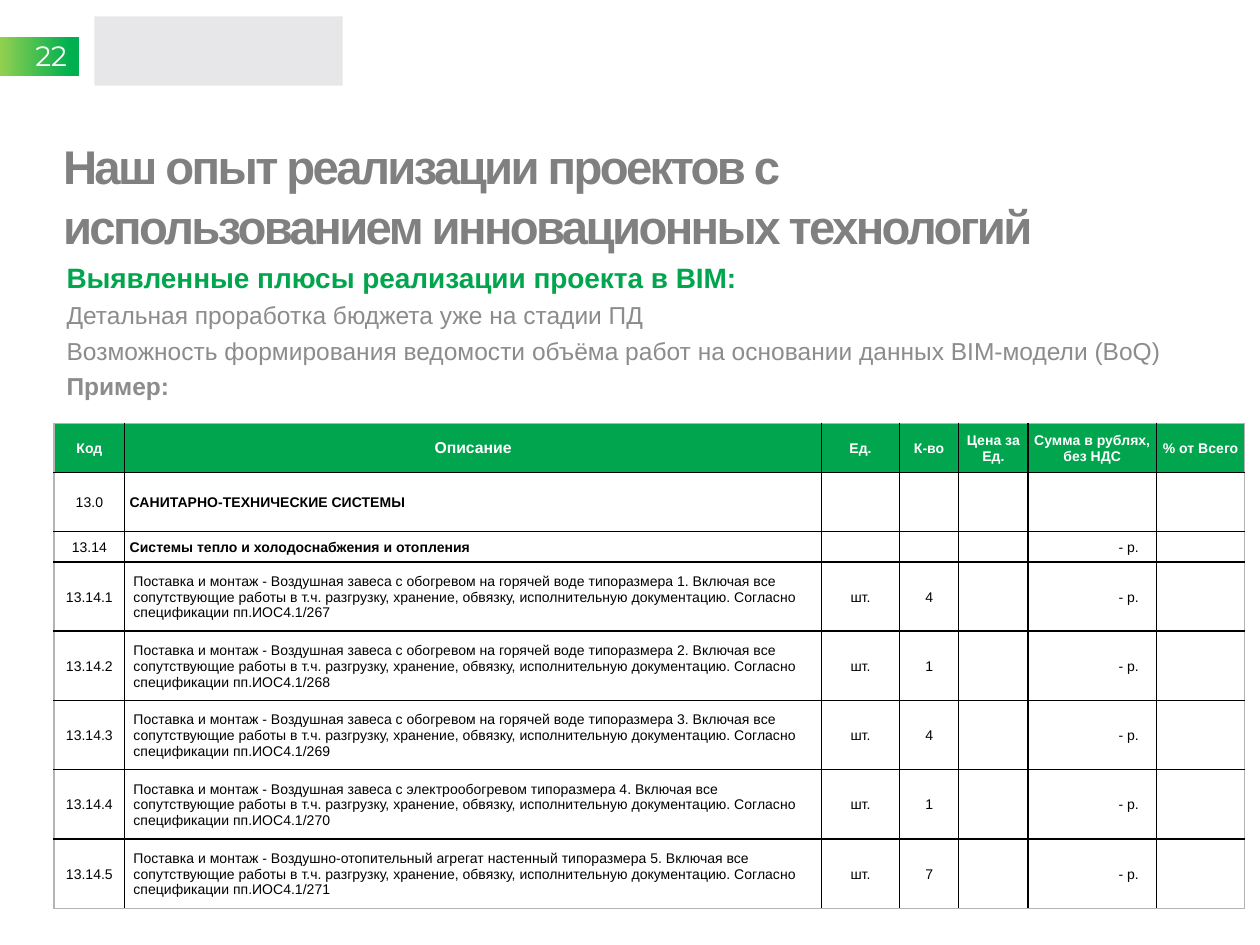
from lxml import etree
from pptx import Presentation
from pptx.dml.color import RGBColor
from pptx.enum.shapes import MSO_SHAPE
from pptx.enum.text import MSO_ANCHOR, PP_ALIGN
from pptx.oxml.ns import qn
from pptx.util import Inches, Pt

RECTANGLE = MSO_SHAPE.RECTANGLE
MIDDLE, TOP = MSO_ANCHOR.MIDDLE, MSO_ANCHOR.TOP
LEFT, CENTER, RIGHT = PP_ALIGN.LEFT, PP_ALIGN.CENTER, PP_ALIGN.RIGHT

WHITE = RGBColor(0xFF, 0xFF, 0xFF)
BLACK = RGBColor(0x00, 0x00, 0x00)
GREEN = RGBColor(0x00, 0xA5, 0x4E)
LIME = RGBColor(0x92, 0xD0, 0x50)
EMERALD = RGBColor(0x00, 0xB0, 0x50)
PALE_GRAY = RGBColor(0xE7, 0xE7, 0xE9)
TITLE_GRAY = RGBColor(0x80, 0x80, 0x80)
TEXT_GRAY = RGBColor(0x8C, 0x8C, 0x8C)
FRAME_GRAY = RGBColor(0xB4, 0xB4, 0xB4)

TITLE = "Наш опыт реализации проектов с использованием инновационных технологий"
BODY = [
    ("Выявленные плюсы реализации проекта в BIM:", 16, GREEN, True),
    ("Детальная проработка бюджета уже на стадии ПД", 14, TEXT_GRAY, False),
    ("Возможность формирования ведомости объёма работ на основании данных "
     "BIM-модели (BoQ)", 14, TEXT_GRAY, False),
    ("Пример:", 14, TEXT_GRAY, True),
]

COLUMN_WIDTHS = [0.56, 5.53, 0.62, 0.47, 0.55, 1.02, 0.7]
ROW_HEIGHTS = [0.39, 0.47, 0.24] + [0.55] * 5
HEADERS = ["Код", "Описание", "Ед.", "К-во", "Цена за Ед.",
           "Сумма в рублях, без НДС", "% от Всего"]
NO_SUM = "- р."
SECTIONS = [
    ["13.0", "САНИТАРНО-ТЕХНИЧЕСКИЕ СИСТЕМЫ", "", "", "", "", ""],
    ["13.14", "Системы тепло и холодоснабжения и отопления", "", "", "", NO_SUM, ""],
]
# Equipment and quantity; codes and specification numbers run on from the first
EQUIPMENT = [
    ("Воздушная завеса с обогревом на горячей воде типоразмера 1", 4),
    ("Воздушная завеса с обогревом на горячей воде типоразмера 2", 1),
    ("Воздушная завеса с обогревом на горячей воде типоразмера 3", 4),
    ("Воздушная завеса с электрообогревом типоразмера 4", 1),
    ("Воздушно-отопительный агрегат настенный типоразмера 5", 7),
]
FIRST_SPECIFICATION = 267


def set_format(target, values):
    for name, value in values.items():
        setattr(target, name, value)


def style_run(run, size, color, bold=False, font="Arial"):
    set_format(run.font, {"size": Pt(size), "bold": bold, "name": font})
    run.font.color.rgb = color


def add_block(slide, left, top, width, height):
    block = slide.shapes.add_shape(
        RECTANGLE, Inches(left), Inches(top), Inches(width), Inches(height))
    block.shadow.inherit = False
    block.line.fill.background()
    return block


def add_text(slide, box, lines, anchor=TOP, align=LEFT, inset=(0.1, 0.05),
             font="Arial", space_before=0):
    """Add a text box with one paragraph per (text, size, color, bold) line."""
    frame = slide.shapes.add_textbox(*map(Inches, box)).text_frame
    side, end = map(Inches, inset)
    set_format(frame, {"word_wrap": True, "vertical_anchor": anchor,
                       "margin_left": side, "margin_right": side,
                       "margin_top": end, "margin_bottom": end})
    for index, (text, size, color, bold) in enumerate(lines):
        paragraph = frame.paragraphs[0] if index == 0 else frame.add_paragraph()
        paragraph.alignment = align
        if index:
            paragraph.space_before = Pt(space_before)
        run = paragraph.add_run()
        run.text = text
        style_run(run, size, color, bold, font)
    return frame


def add_borders(cell, colors):
    """Draw 1 pt lines around a cell, in the order left, right, top, bottom."""
    properties = cell._tc.get_or_add_tcPr()
    for index, (side, color) in enumerate(zip("LRTB", colors)):
        line = etree.Element(qn(f"a:ln{side}"), w=str(Pt(1)))
        fill = etree.SubElement(line, qn("a:solidFill"))
        etree.SubElement(fill, qn("a:srgbClr"), val=str(color))
        properties.insert(index, line)


def fill_cell(cell, text, size, color, bold, align, left=0.01, right=0.01):
    set_format(cell, {"vertical_anchor": MIDDLE,
                      "margin_left": Inches(left), "margin_right": Inches(right),
                      "margin_top": Inches(0.01), "margin_bottom": 0})
    paragraph = cell.text_frame.paragraphs[0]
    paragraph.alignment = align
    if text:
        run = paragraph.add_run()
        run.text = text
        style_run(run, size, color, bold)
    else:
        etree.SubElement(paragraph._p, qn("a:endParaRPr"), sz=str(size * 100))


def equipment_rows():
    return [
        [f"13.14.{number}",
         f"Поставка и монтаж - {name}. Включая все сопутствующие работы в т.ч. "
         "разгрузку, хранение, обвязку, исполнительную документацию. Согласно "
         f"спецификации пп.ИОС4.1/{FIRST_SPECIFICATION + number - 1}",
         "шт.", str(quantity), "", NO_SUM, ""]
        for number, (name, quantity) in enumerate(EQUIPMENT, 1)
    ]


def add_bill_of_quantities(slide):
    rows = [HEADERS] + SECTIONS + equipment_rows()
    last_row, last_column = len(rows) - 1, len(HEADERS) - 1
    table = slide.shapes.add_table(
        len(rows), len(HEADERS), Inches(0.43), Inches(3.36),
        Inches(sum(COLUMN_WIDTHS)), Inches(sum(ROW_HEIGHTS))).table
    for column, width in zip(table.columns, COLUMN_WIDTHS):
        column.width = Inches(width)
    for row, height in zip(table.rows, ROW_HEIGHTS):
        row.height = Inches(height)

    for r, texts in enumerate(rows):
        is_header, is_section = r == 0, 1 <= r <= len(SECTIONS)
        for c, text in enumerate(texts):
            cell = table.cell(r, c)
            if is_header:
                cell.fill.solid()
                cell.fill.fore_color.rgb = GREEN
                fill_cell(cell, text, 9 if c == 1 else 8, WHITE, True, CENTER)
            else:
                cell.fill.background()
                layout = {"align": CENTER}
                if c == 1:
                    layout = {"align": LEFT, "left": 0.04 if is_section else 0.07}
                elif text == NO_SUM:
                    layout = {"align": RIGHT, "right": 0.14}
                fill_cell(cell, text, 8, BLACK, is_section and c == 1, **layout)
            outer = [c == 0, c == last_column, r == 0, r == last_row]
            add_borders(cell, [FRAME_GRAY if edge else BLACK for edge in outer])


def add_header(slide):
    badge = add_block(slide, 0, 0.29, 0.63, 0.31)
    badge.fill.gradient()
    badge.fill.gradient_angle = 0
    stops = badge.fill.gradient_stops
    for stop, color, position in zip(stops, (LIME, EMERALD), (0, 0.88)):
        stop.color.rgb = color
        stop.position = position
    logo_area = add_block(slide, 0.75, 0.13, 1.97, 0.55)
    logo_area.fill.solid()
    logo_area.fill.fore_color.rgb = PALE_GRAY
    add_text(slide, (-0.28, 0.28, 0.91, 0.32), [("22", 16, WHITE, False)],
             anchor=MIDDLE, align=RIGHT, font="Montserrat")


def add_title(slide):
    frame = add_text(slide, (0.5, 1.07, 8.52, 0.79),
                     [(TITLE, 27, TITLE_GRAY, True)], inset=(0, 0))
    paragraph = frame.paragraphs[0]
    paragraph.line_spacing = 1.05
    paragraph.runs[0].font._element.set("spc", "-150")


def main():
    presentation = Presentation()
    presentation.slide_width, presentation.slide_height = Inches(10), Inches(7.5)
    slide = presentation.slides.add_slide(presentation.slide_layouts[6])
    add_header(slide)
    add_text(slide, (0.43, 2.02, 10.87, 5.12), BODY, space_before=3.5)
    add_bill_of_quantities(slide)
    add_title(slide)
    presentation.save("out.pptx")


if __name__ == "__main__":
    main()
